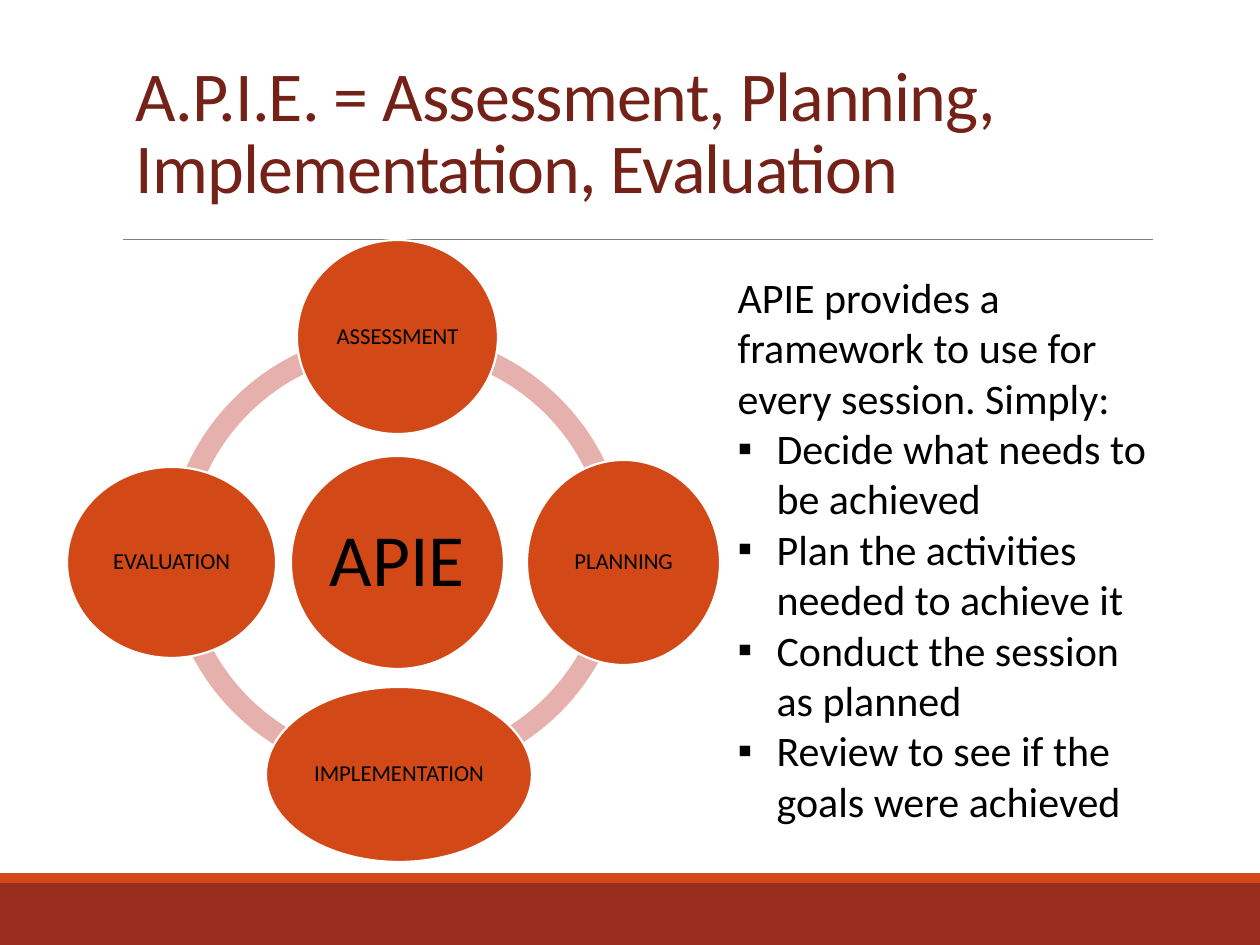
from lxml.etree import SubElement as Sub
from pptx import Presentation
from pptx.dml.color import RGBColor
from pptx.enum.shapes import MSO_CONNECTOR as Link, MSO_SHAPE as Kind
from pptx.enum.text import MSO_ANCHOR as Anchor, MSO_AUTO_SIZE as Fit, PP_ALIGN as Align
from pptx.oxml.ns import qn
from pptx.util import Emu, Pt

SCALE = 914400 / 126
ORANGE, RED, PINK, WHITE = "D34817", "9B2D1F", "E6B1AC", "FFFFFF"
LEAD = "APIE provides a framework to use for every session. Simply:"
STEPS = [
    "Decide what needs to be achieved",
    "Plan the activities needed to achieve it",
    "Conduct the session as planned",
    "Review to see if the goals were achieved",
]
# Top of the ring, then start angle, end angle and thickness
ARCS = [
    (331, 108, 162, 0.046),
    (318, 53.7, 105.9, 0.046),
    (318, 2.1, 53.83, 0.046),
    (331, 162, 0, 0.046),
]
NODES = [
    ("APIE", 42, (291, 456, 213, 213)),
    ("ASSESSMENT", 13, (297, 240, 201, 194)),
    ("PLANNING", 13, (527, 460, 193, 205)),
    ("IMPLEMENTATION", 13, (266, 687, 266, 175)),
    ("EVALUATION", 13, (67, 467, 209, 191)),
]


def px(n):
    return Emu(round(n * SCALE))


def color(text):
    return RGBColor.from_string(text)


def place(shape, box):
    shape.left, shape.top, shape.width, shape.height = map(px, box)


def write(para, text, size, ink="000000", align=Align.LEFT, lead=1.0, track=0):
    para.alignment = align
    para.line_spacing = lead
    para.space_before = para.space_after = Pt(0)
    run = para.add_run()
    run.text = text
    font = run.font
    font.name, font.size = "Calibri", Pt(size)
    font.color.rgb = color(ink)
    if track:
        run.font._element.set("spc", str(track))


def bullet(para, mark=None, indent=0):
    """Set the bullet sign, or none, with its hanging indent."""
    props = para._p.get_or_add_pPr()
    props.set("marL", str(px(indent)))
    props.set("indent", str(-px(indent)))
    if mark:
        Sub(props, qn("a:buChar")).set("char", mark)
    else:
        Sub(props, qn("a:buNone"))


def draw(shapes, kind, box, fill, edge=None):
    shape = shapes.add_shape(kind, *map(px, box))
    shape.shadow.inherit = False
    shape.fill.solid()
    shape.fill.fore_color.rgb = color(fill)
    if edge:
        shape.line.color.rgb = color(edge)
        shape.line.width = Pt(1.25)
    else:
        shape.line.fill.background()
    return shape


def rule(shapes, x, y, end):
    line = shapes.add_connector(Link.STRAIGHT, px(x), px(y), px(end), px(y))
    line.line.color.rgb = color("808080")
    line.line.width = Pt(0.5)
    Sub(line._element.spPr, qn("a:effectLst"))


def node(shapes, text, size, box):
    frame = draw(shapes, Kind.OVAL, box, ORANGE, WHITE).text_frame
    frame.word_wrap = False
    frame.vertical_anchor = Anchor.MIDDLE
    frame.margin_left = frame.margin_right = px(2)
    frame.margin_top = frame.margin_bottom = px(2)
    write(frame.paragraphs[0], text, size, align=Align.CENTER, lead=0.9)


def cycle(shapes):
    for top, *turns in ARCS:
        arc = draw(shapes, Kind.BLOCK_ARC, (166, top, 462, 462), PINK)
        for i, turn in enumerate(turns):
            arc.adjustments[i] = turn
    for item in NODES:
        node(shapes, *item)


def title(shape):
    place(shape, (123, 14, 1040, 200))
    frame = shape.text_frame
    frame.auto_size = Fit.NONE
    frame.vertical_anchor = Anchor.BOTTOM
    write(frame.paragraphs[0],
          "A.P.I.E. = Assessment, Planning, Implementation, Evaluation",
          40, ink="742217", lead=0.85, track=-50)


def body(shape):
    place(shape, (725, 265, 438, 611))
    frame = shape.text_frame
    frame.auto_size = Fit.NONE
    write(frame.paragraphs[0], LEAD, 24)
    bullet(frame.paragraphs[0])
    for step in STEPS:
        para = frame.add_paragraph()
        write(para, step, 24)
        bullet(para, "▪", 39)


def main():
    deck = Presentation()
    deck.slide_width, deck.slide_height = px(1260), px(945)
    slide = deck.slides.add_slide(deck.slide_layouts[1])
    shapes = slide.shapes
    for top, high, fill in ((873, 9, ORANGE), (882, 63, RED), (874, 9, ORANGE)):
        draw(shapes, Kind.RECTANGLE, (0, top, 1260, high), fill)
    rule(shapes, 123, 239, 1153)
    title(shapes.title)
    cycle(shapes.add_group_shape().shapes)
    body(slide.placeholders[1])
    deck.save("out.pptx")


if __name__ == "__main__":
    main()
